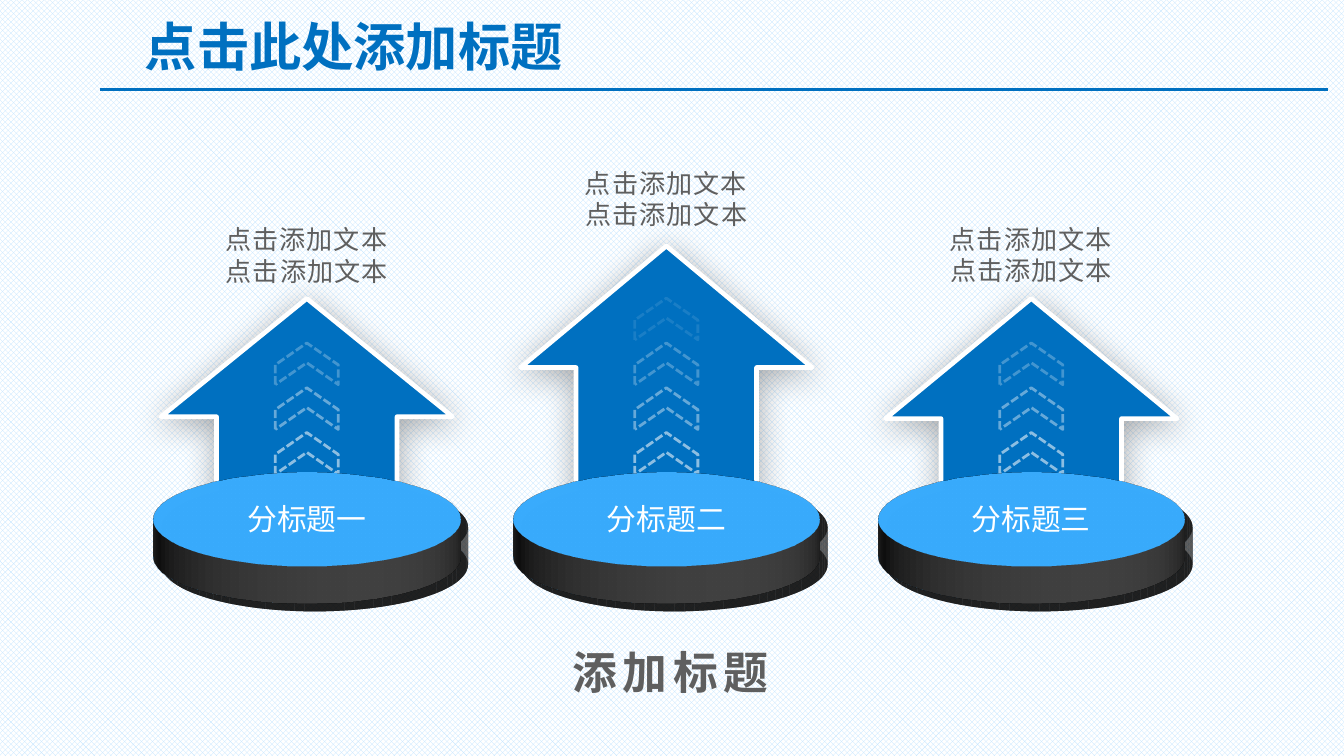
from lxml.etree import SubElement
from pptx import Presentation
from pptx.dml.color import RGBColor
from pptx.enum.dml import MSO_LINE, MSO_PATTERN
from pptx.enum.shapes import MSO_CONNECTOR, MSO_SHAPE
from pptx.enum.text import PP_ALIGN
from pptx.oxml.ns import qn
from pptx.util import Pt

FONT = "Noto Sans CJK SC"
BLUE = RGBColor(0x00, 0x70, 0xC0)
GREY = RGBColor(0x5F, 0x5F, 0x5F)
DISC_SIDE = RGBColor(0x80, 0x80, 0x80)
PALE_BLUE = RGBColor(0xBF, 0xE4, 0xFF)
WHITE = RGBColor(0xFF, 0xFF, 0xFF)

ARROW_BOTTOM = 287.6
DISC_TOP = 218.9
COLUMN_WIDTH = 164.2
# left, caption top, arrow top, arrow head ratio, number of chevrons, label
COLUMNS = [
    (82.3, 116.4, 159.9, 0.496, 3, "分标题一"),
    (274.9, 86.1, 131.8, 0.418, 4, "分标题二"),
    (470.4, 115.9, 159.9, 0.504, 3, "分标题三"),
]


def add_text(slide, text, left, top, width, height, size, color,
             align=PP_ALIGN.CENTER, bold=False, spacing=0):
    """Add a one-paragraph text box; spacing is between letters, in points."""
    box = slide.shapes.add_textbox(Pt(left), Pt(top), Pt(width), Pt(height))
    box.text_frame.word_wrap = True
    paragraph = box.text_frame.paragraphs[0]
    paragraph.alignment = align
    paragraph.line_spacing = Pt(size * 1.2)
    run = paragraph.add_run()
    run.text = text
    font = run.font
    font.size, font.bold, font.name = Pt(size), bold, FONT
    font.color.rgb = color
    properties = run._r.get_or_add_rPr()
    SubElement(properties, qn("a:ea"), typeface=FONT)
    if spacing:
        properties.set("spc", str(int(spacing * 100)))


def add_blue_shape(shapes, preset, left, top, width, height, line_width):
    shape = shapes.add_shape(preset, Pt(left), Pt(top), Pt(width), Pt(height))
    shape.shadow.inherit = False
    shape.fill.solid()
    shape.fill.fore_color.rgb = BLUE
    shape.line.color.rgb = WHITE
    shape.line.width = Pt(line_width)
    return shape


def add_shadow(shape, opacity, blur, distance, angle):
    effects = shape._element.spPr.find(qn("a:effectLst"))
    shadow = SubElement(effects, qn("a:outerShdw"), blurRad=str(Pt(blur)),
                        dist=str(Pt(distance)), dir=str(angle * 60000),
                        algn="tl", rotWithShape="0")
    color = SubElement(shadow, qn("a:srgbClr"), val="000000")
    SubElement(color, qn("a:alpha"), val=str(opacity * 1000))


def add_depth(shape, tilt, depth, color):
    """Tilt a shape backwards by some degrees and extrude it."""
    properties = shape._element.spPr
    scene = SubElement(properties, qn("a:scene3d"))
    camera = SubElement(scene, qn("a:camera"), prst="orthographicFront")
    SubElement(camera, qn("a:rot"), lat=str((360 - tilt) * 60000), lon="0", rev="0")
    SubElement(scene, qn("a:lightRig"), rig="threePt", dir="t")
    solid = SubElement(properties, qn("a:sp3d"), extrusionH=str(Pt(depth)))
    side = SubElement(solid, qn("a:extrusionClr"))
    SubElement(side, qn("a:srgbClr"), val=str(color))


def add_arrow(slide, left, top, width, height, head, chevrons):
    """Add an up arrow with a fading stack of dashed chevrons on its shaft."""
    shapes = slide.shapes.add_group_shape().shapes
    arrow = add_blue_shape(shapes, MSO_SHAPE.UP_ARROW, left, top, width, height, 2.5)
    arrow.adjustments[0], arrow.adjustments[1] = 0.619, head
    add_shadow(arrow, opacity=33, blur=17.8, distance=3, angle=87)

    chevron_width, chevron_height = 22.3, 33.8
    for step in range(chevrons):
        chevron = add_blue_shape(shapes, MSO_SHAPE.CHEVRON,
                                 left + (width - chevron_width) / 2,
                                 top + height - 61.6 - 24 * step,
                                 chevron_width, chevron_height, 1.5)
        chevron.rotation = 270
        chevron.adjustments[0] = 0.525
        chevron.line.dash_style = MSO_LINE.SQUARE_DOT
        color = chevron.line._ln.find(".//" + qn("a:srgbClr"))
        SubElement(color, qn("a:alpha"), val=str((55 - 15 * step) * 1000))


def add_disc(slide, left, top, width, height, label):
    disc = add_blue_shape(slide.shapes, MSO_SHAPE.OVAL, left, top, width, height, 2)
    add_shadow(disc, opacity=40, blur=10, distance=6, angle=45)
    add_depth(disc, tilt=65, depth=22, color=DISC_SIDE)
    label_width = 122.4
    add_text(slide, label, left + (width - label_width) / 2, top + 46,
             label_width, 26.6, 16, WHITE)


def add_column(slide, left, caption_top, arrow_top, width, head, chevrons, label):
    arrow_width, caption_width = 156.2, 112.3
    add_arrow(slide, left + (width - arrow_width) / 2, arrow_top, arrow_width,
              ARROW_BOTTOM - arrow_top, head, chevrons)
    add_text(slide, "点击添加文本点击添加文本",
             left + (width - caption_width) / 2, caption_top,
             caption_width, 41, 14, GREY, spacing=0.5)
    add_disc(slide, left, DISC_TOP, width, 118.8, label)


def add_header(slide, left, top, width):
    rule_y = top + 48
    rule = slide.shapes.add_connector(MSO_CONNECTOR.STRAIGHT, Pt(left), Pt(rule_y),
                                      Pt(left + width), Pt(rule_y))
    rule.line.color.rgb = BLUE
    rule.line.width = Pt(1.5)
    SubElement(rule._element.spPr, qn("a:effectLst"))
    add_text(slide, "点击此处添加标题", left + 16.8, top + 4, 648, 44.6, 28, BLUE,
             align=PP_ALIGN.LEFT, bold=True)


def main():
    prs = Presentation()
    prs.slide_width, prs.slide_height = Pt(720), Pt(405)
    slide = prs.slides.add_slide(prs.slide_layouts[6])
    backdrop = slide.background.fill
    backdrop.patterned()
    backdrop.pattern = MSO_PATTERN.TRELLIS
    backdrop.fore_color.rgb = PALE_BLUE
    backdrop.back_color.rgb = WHITE

    add_header(slide, 53.8, 0, 657.6)
    for left, caption_top, arrow_top, head, chevrons, label in COLUMNS:
        add_column(slide, left, caption_top, arrow_top, COLUMN_WIDTH,
                   head, chevrons, label)
    add_text(slide, "添加标题", 271, 342, 176.4, 36, 24, GREY, bold=True, spacing=3)
    prs.save("out.pptx")


if __name__ == "__main__":
    main()
